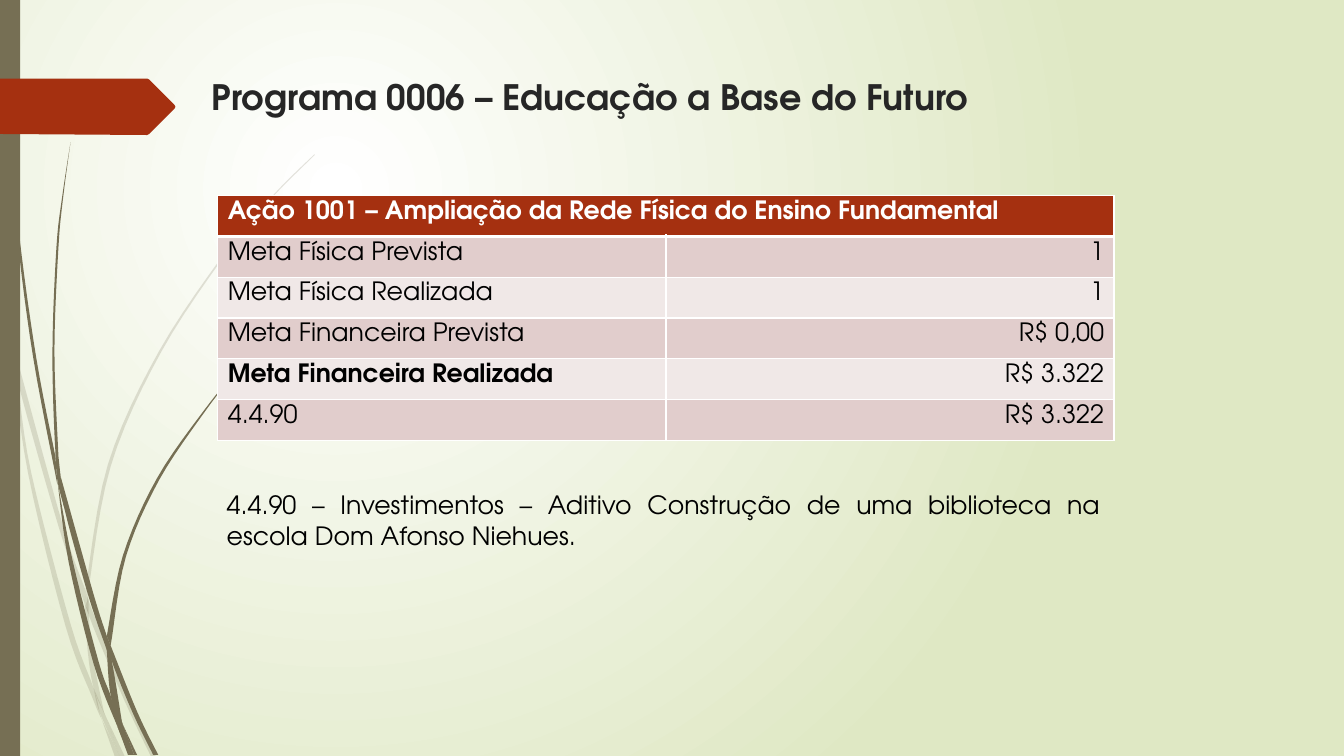
from lxml import etree
from pptx import Presentation
from pptx.dml.color import RGBColor
from pptx.enum.shapes import MSO_SHAPE
from pptx.enum.text import MSO_ANCHOR, PP_ALIGN
from pptx.oxml import parse_xml
from pptx.oxml.ns import nsdecls, qn
from pptx.util import Inches, Pt

LEFT, RIGHT, JUSTIFY = PP_ALIGN.LEFT, PP_ALIGN.RIGHT, PP_ALIGN.JUSTIFY
TOP = MSO_ANCHOR.TOP
RECTANGLE = MSO_SHAPE.RECTANGLE

FONT = "TeX Gyre Adventor"
OLIVE, RUST, WHITE, BLACK = "766F54", "A53010", "FFFFFF", "000000"
BANDS = ["E1CDCC", "F0E8E7"]
TITLE = "Programa 0006 – Educação a Base do Futuro"
HEADER = "Ação 1001 – Ampliação da Rede Física do Ensino Fundamental"
ROWS = [
    ("Meta Física Prevista", "1", False),
    ("Meta Física Realizada", "1", False),
    ("Meta Financeira Prevista", "R$ 0,00", False),
    ("Meta Financeira Realizada", "R$ 3.322", True),
    ("4.4.90", "R$ 3.322", False),
]
NOTE = ("4.4.90 – Investimentos – Aditivo Construção de uma biblioteca "
        "na escola Dom Afonso Niehues.")

PALE_BLADES = [
    ([(0, 2.99), (0.1, 3.44), (0.11, 3.5)], [(0.11, 3.5), (0.09, 3.22), (0, 2.82)]),
    ([(0.14, 3.45), (0.17, 3.76), (0.58, 5.22), (0.84, 5.99)], [(0.85, 5.86), (0.62, 5.2), (0.14, 3.45)]),
    ([(0.88, 5.96), (0.88, 6.1), (1.23, 6.94), (1.5, 7.51)], [(1.55, 7.51), (1.27, 6.92), (0.92, 6.07)]),
    ([(1.05, 7.11), (1.19, 7.51)], [(1.24, 7.51), (1.05, 7.11)]),
    ([(0.11, 3.5), (0.28, 4.7), (0.65, 6.21), (0.92, 6.93), (1.01, 7.14)],
     [(0.99, 7.07), (0.93, 6.83), (0.7, 6.19), (0.31, 4.69), (0.17, 3.76), (0.11, 3.5)]),
    ([(0.84, 5.99), (0.87, 6.46), (0.93, 6.83), (1.05, 7.11)],
     [(1.03, 7.06), (0.91, 6.46), (0.88, 6.1), (0.84, 5.99)]),
    ([(3.12, 1.53), (2.89, 1.75), (2.68, 1.97), (2.28, 2.44), (1.58, 3.48), (1.07, 4.61), (0.85, 5.84)],
     [(0.88, 5.96), (0.88, 5.84), (1.1, 4.62), (1.6, 3.49), (2.29, 2.45), (2.68, 1.98), (3.12, 1.54)]),
    ([(1.01, 7.14), (1.14, 7.51)], [(1.19, 7.51), (1.01, 7.14)]),
    ([(0.85, 5.86), (0.84, 5.99)], [(0.88, 6.1), (0.88, 5.96)]),
    ([(0.93, 6.83), (0.99, 7.07), (1.19, 7.51)], [(1.05, 7.11), (0.93, 6.83)]),
]
DARK_BLADES = [
    ([(0.03, 0), (0.07, 1.1), (0.17, 2.33), (0.33, 3.55), (0.57, 4.81)],
     [(0.55, 4.53), (0.36, 3.55), (0.19, 2.32), (0.08, 1.09), (0.04, 0)]),
    ([(0.6, 4.72), (0.64, 5.05), (0.88, 5.92), (1.06, 6.45)], [(1.06, 6.31), (0.93, 5.9), (0.6, 4.72)]),
    ([(1.1, 6.41), (1.11, 6.56), (1.32, 7.08), (1.52, 7.49)], [(1.57, 7.49), (1.36, 7.06), (1.1, 6.41)]),
    ([(0.57, 4.77), (0.68, 5.57), (0.93, 6.59), (1.17, 7.22)],
     [(1.16, 7.17), (1.1, 6.91), (0.98, 6.57), (0.72, 5.56), (0.57, 4.77)]),
    ([(0.7, 1.41), (0.62, 1.93), (0.56, 2.45), (0.52, 3.49), (0.55, 4.49), (0.6, 4.72)],
     [(0.58, 4.53), (0.54, 3.49), (0.58, 2.45), (0.63, 1.93), (0.7, 1.41)]),
    ([(1.22, 7.19), (1.33, 7.49)], [(1.36, 7.49), (1.22, 7.19)]),
    ([(0.55, 4.49), (0.57, 4.77), (0.64, 5.05)], [(0.6, 4.72), (0.55, 4.49)]),
    ([(2.6, 3.44), (2.31, 3.73), (2.04, 4.05), (1.56, 4.74), (1.22, 5.51), (1.06, 6.31)],
     [(1.1, 6.41), (1.11, 6.33), (1.25, 5.52), (1.58, 4.76), (2.05, 4.06), (2.31, 3.74), (2.6, 3.44)]),
    ([(1.17, 7.22), (1.27, 7.49)], [(1.31, 7.49), (1.17, 7.22)]),
    ([(1.06, 6.45), (1.1, 6.91), (1.22, 7.19)], [(1.21, 7.16), (1.11, 6.56), (1.06, 6.45)]),
    ([(1.06, 6.31), (1.06, 6.45), (1.11, 6.56)], [(1.1, 6.41), (1.06, 6.31)]),
    ([(1.1, 6.91), (1.17, 7.22), (1.3, 7.49)], [(1.33, 7.49), (1.22, 7.19), (1.1, 6.91)]),
]
ARROW = [(0, 0.78), (1.46, 0.78), (1.48, 0.79), (1.73, 1.04), (1.74, 1.06),
         (1.73, 1.08), (1.48, 1.33), (1.46, 1.34), (0, 1.33)]


def color(value):
    return RGBColor.from_string(value)


def paint(shape, fill, alpha=None):
    shape.shadow.inherit = False
    shape.fill.solid()
    shape.fill.fore_color.rgb = color(fill)
    shape.line.fill.background()
    if alpha:
        tone = shape.fill._xPr.find(".//" + qn("a:srgbClr"))
        etree.SubElement(tone, qn("a:alpha"), val=str(alpha * 1000))


def smooth(points, steps=6):
    padded = [points[0], *points, points[-1]]
    curve = []
    for before, start, end, after in zip(padded, padded[1:], padded[2:], padded[3:]):
        for step in range(steps):
            t = step / steps
            curve.append(tuple(
                b + (c - a) * t / 2 + (2 * a - 5 * b + 4 * c - d) * t ** 2 / 2
                + (3 * b - a - 3 * c + d) * t ** 3 / 2
                for a, b, c, d in zip(before, start, end, after)))
    return curve + [points[-1]]


def outline(page, points, fill, alpha=None):
    start, *others = [(Inches(x), Inches(y)) for x, y in points]
    builder = page.shapes.build_freeform(*start)
    builder.add_line_segments(others, close=True)
    paint(builder.convert_to_shape(), fill, alpha)


def write(frame, text, align=LEFT, **changes):
    frame.word_wrap = True
    para = frame.paragraphs[0]
    para.alignment = align
    span = para.add_run()
    span.text = text
    look = {"name": FONT, "size": Pt(18), "bold": False, "color": BLACK, **changes}
    span.font.color.rgb = color(look.pop("color"))
    for key, value in look.items():
        setattr(span.font, key, value)


def border(cell, widths):
    properties = cell._tc.get_or_add_tcPr()
    for position, (side, width) in enumerate(zip("LRTB", widths)):
        properties.insert(position, parse_xml(
            f'<a:ln{side} {nsdecls("a")} w="{Pt(width)}"><a:solidFill>'
            f'<a:srgbClr val="{WHITE}"/></a:solidFill></a:ln{side}>'))


def fill_cell(cell, text, fill, widths=(1, 1, 1, 1), **look):
    cell.vertical_anchor = TOP
    cell.fill.solid()
    cell.fill.fore_color.rgb = color(fill)
    border(cell, widths)
    if text:
        write(cell.text_frame, text, **look)


def background(page):
    page.background.fill.gradient()
    gradient = page.background._cSld.find(".//" + qn("a:gradFill"))
    gradient.getparent().replace(gradient, parse_xml(
        f'<a:gradFill {nsdecls("a")} rotWithShape="1"><a:gsLst>'
        '<a:gs pos="0"><a:srgbClr val="FFFFFF"/></a:gs>'
        '<a:gs pos="100000"><a:srgbClr val="DFE8C4"/></a:gs></a:gsLst>'
        '<a:path path="circle"><a:fillToRect l="50000" t="50000" r="100000" b="100000"/>'
        '</a:path></a:gradFill>'))


def decorate(page):
    for blades, alpha in ((PALE_BLADES, 20), (DARK_BLADES, None)):
        for down, back in blades:
            outline(page, smooth(down) + smooth(back), OLIVE, alpha)
    bar = page.shapes.add_shape(RECTANGLE, 0, 0, Inches(0.2), Inches(7.5))
    paint(bar, OLIVE)
    outline(page, ARROW, RUST)


def add_goals(page):
    frame = page.shapes.add_table(len(ROWS) + 1, 2, Inches(2.16), Inches(1.94),
                                  Inches(8.89), Inches(2.43))
    table = frame.table
    table.cell(0, 0).merge(table.cell(0, 1))
    for column, text in enumerate((HEADER, "")):
        fill_cell(table.cell(0, column), text, RUST, (1, 1, 1, 3), bold=True, color=WHITE)
    for index, (label, value, strong) in enumerate(ROWS):
        fill = BANDS[index % 2]
        widths = (1, 1, 1 if index else 3, 1)
        fill_cell(table.cell(index + 1, 0), label, fill, widths, bold=strong)
        fill_cell(table.cell(index + 1, 1), value, fill, widths, align=RIGHT)


def main():
    deck = Presentation()
    deck.slide_width, deck.slide_height = Inches(13.33), Inches(7.5)
    page = deck.slides.add_slide(deck.slide_layouts[5])
    background(page)
    decorate(page)
    title = page.shapes.title
    place = {"left": 2, "top": 0.7, "width": 10.57, "height": 0.7}
    for key, value in place.items():
        setattr(title, key, Inches(value))
    title.text_frame.vertical_anchor = TOP
    write(title.text_frame, TITLE, size=Pt(25), bold=True, color="262626")
    add_goals(page)
    note = page.shapes.add_textbox(Inches(2.15), Inches(4.81), Inches(8.86), Inches(0.71))
    write(note.text_frame, NOTE, JUSTIFY)
    deck.save("out.pptx")


if __name__ == "__main__":
    main()
